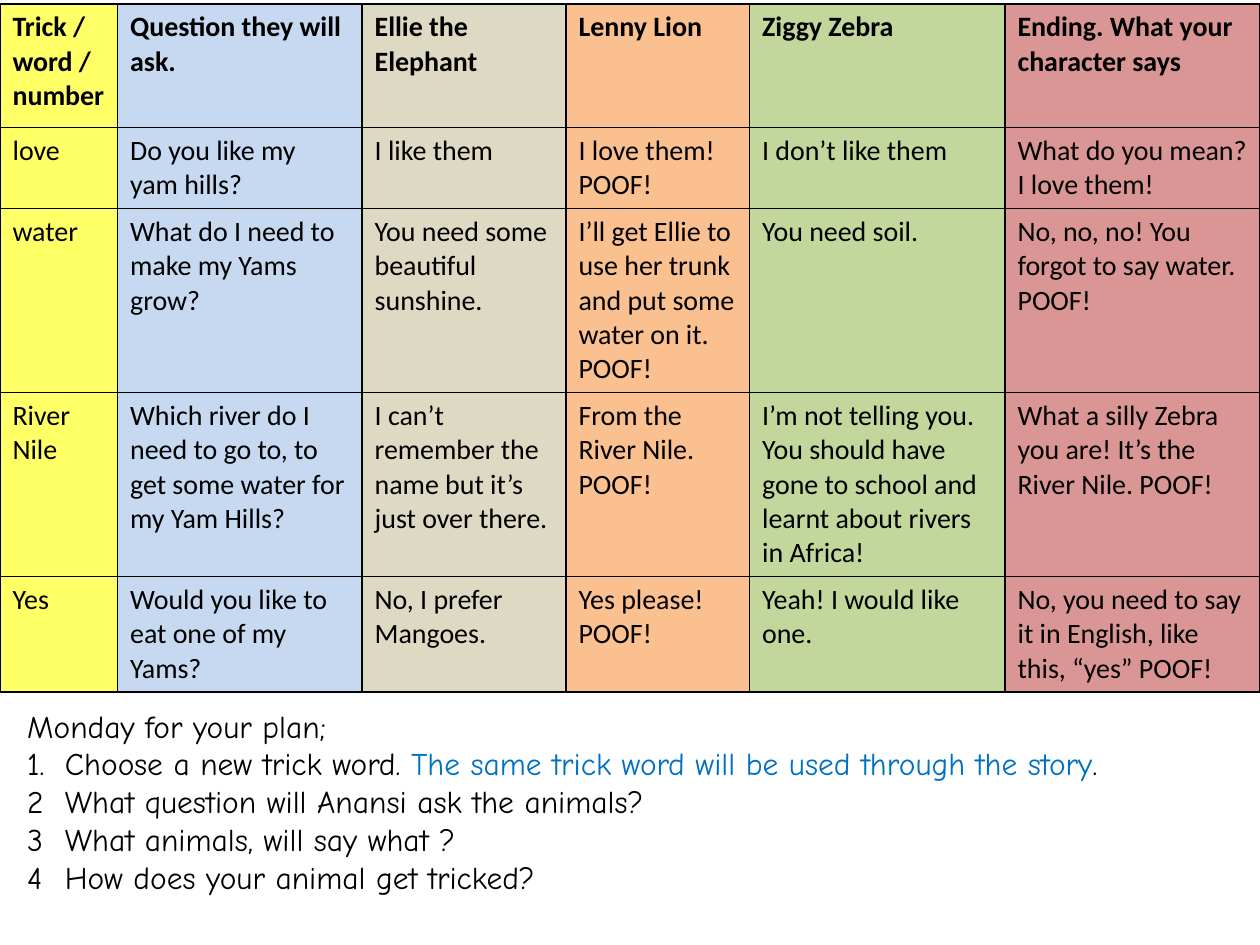
import lxml.etree
import pptx
import pptx.dml.color
import pptx.enum.text
import pptx.oxml.ns
import pptx.util
from pptx.util import Cm

THEME = {
    "ink": "000000",
    "accent": "0070C0",
    "columns": ["FFFF66", "C6D9F1", "DDD9C3", "FAC090", "C3D69B", "D99694"],
    "table": {"name": "Calibri", "size": pptx.util.Pt(16)},
    "plan": {"name": "Comic Neue", "size": pptx.util.Pt(18)},
    "border": pptx.util.Pt(1),
}

# A line break inside a cell starts a new paragraph.
STORY = [
    ["Trick / word / number", "Question they will ask.", "Ellie the Elephant",
     "Lenny Lion", "Ziggy Zebra", "Ending. What your character says"],
    ["love", "Do you like my yam hills?", "I like them",
     "I love them!\nPOOF!", "I don’t like them", "What do you mean? I love them!"],
    ["water", "What do I need to make my Yams grow?", "You need some beautiful sunshine.",
     "I’ll get Ellie to use her trunk and put some water on it. POOF!",
     "You need soil.", "No, no, no! You forgot to say water. POOF!"],
    ["River Nile", "Which river do I need to go to, to get some water for my Yam Hills?",
     "I can’t remember the name but it’s just over there.",
     "From the River Nile. POOF!",
     "I’m not telling you. You should have gone to school and learnt about rivers in Africa!",
     "What a silly Zebra you are! It’s the River Nile. POOF!"],
    ["Yes", "Would you like to eat one of my Yams?", "No, I prefer Mangoes.",
     "Yes please!\nPOOF!", "Yeah! I would like one.",
     "No, you need to say it in English, like this, “yes” POOF!"],
]
COLUMN_WIDTHS = [2.37, 4.93, 4.11, 3.7, 5.15, 5.14]
ROW_HEIGHTS = [2.49, 1.63, 3.71, 3.71, 2.32]

PLAN_TITLE = "Monday for your plan;"
PLAN_STEPS = [
    ("1.", [("Choose a new trick word. ", "ink"),
            ("The same trick word will be used through the story", "accent"),
            (".", "ink")]),
    ("2", [("What question will Anansi ask the animals?", "ink")]),
    ("3", [("What animals, will say what ?", "ink")]),
    ("4", [("How does your animal get tricked?", "ink")]),
]
STEP_INDENT = Cm(0.76)


def rgb(value):
    return pptx.dml.color.RGBColor.from_string(value)


def add_span(para, text, style, color="ink", **extra):
    span = para.add_run()
    span.text = text
    for name, value in {**THEME[style], **extra}.items():
        setattr(span.font, name, value)
    span.font.color.rgb = rgb(THEME[color])


def add_element(parent, tag, **attributes):
    return lxml.etree.SubElement(
        parent, pptx.oxml.ns.qn(tag), {key: str(value) for key, value in attributes.items()})


def outline_cell(cell):
    """Draw all four borders; call before the fill, which must follow them in the XML."""
    properties = cell._tc.get_or_add_tcPr()
    for side in ("a:lnL", "a:lnR", "a:lnT", "a:lnB"):
        line = add_element(properties, side, w=int(THEME["border"]))
        add_element(add_element(line, "a:solidFill"), "a:srgbClr", val=THEME["ink"])


def add_story_table(page):
    table = page.shapes.add_table(
        len(STORY), len(COLUMN_WIDTHS), Cm(0), Cm(0.08),
        Cm(sum(COLUMN_WIDTHS)), Cm(sum(ROW_HEIGHTS))).table
    table.horz_banding = False
    for column, width in zip(table.columns, COLUMN_WIDTHS):
        column.width = Cm(width)
    for row_index, (row, height, texts) in enumerate(zip(table.rows, ROW_HEIGHTS, STORY)):
        row.height = Cm(height)
        for cell, text, color in zip(row.cells, texts, THEME["columns"]):
            outline_cell(cell)
            cell.fill.solid()
            cell.fill.fore_color.rgb = rgb(color)
            for index, line in enumerate(text.split("\n")):
                frame = cell.text_frame
                para = frame.add_paragraph() if index else frame.paragraphs[0]
                add_span(para, line, "table", bold=row_index == 0)


def add_plan(page):
    frame = page.shapes.add_textbox(Cm(0.3), Cm(14.12), Cm(24.8), Cm(4.11)).text_frame
    frame.word_wrap = True
    frame.auto_size = pptx.enum.text.MSO_AUTO_SIZE.SHAPE_TO_FIT_TEXT
    add_span(frame.paragraphs[0], PLAN_TITLE, "plan")
    for number, parts in PLAN_STEPS:
        para = frame.add_paragraph()
        properties = para._p.get_or_add_pPr()
        properties.set("marL", str(int(STEP_INDENT)))
        properties.set("indent", str(-int(STEP_INDENT)))
        add_element(properties, "a:buNone")
        add_span(para, number + "\t", "plan")
        for text, color in parts:
            add_span(para, text, "plan", color)


def main():
    deck = pptx.Presentation()
    deck.slide_width, deck.slide_height = Cm(25.4), Cm(19.05)
    page = deck.slides.add_slide(deck.slide_layouts[6])
    add_story_table(page)
    add_plan(page)
    deck.save("out.pptx")


if __name__ == "__main__":
    main()
